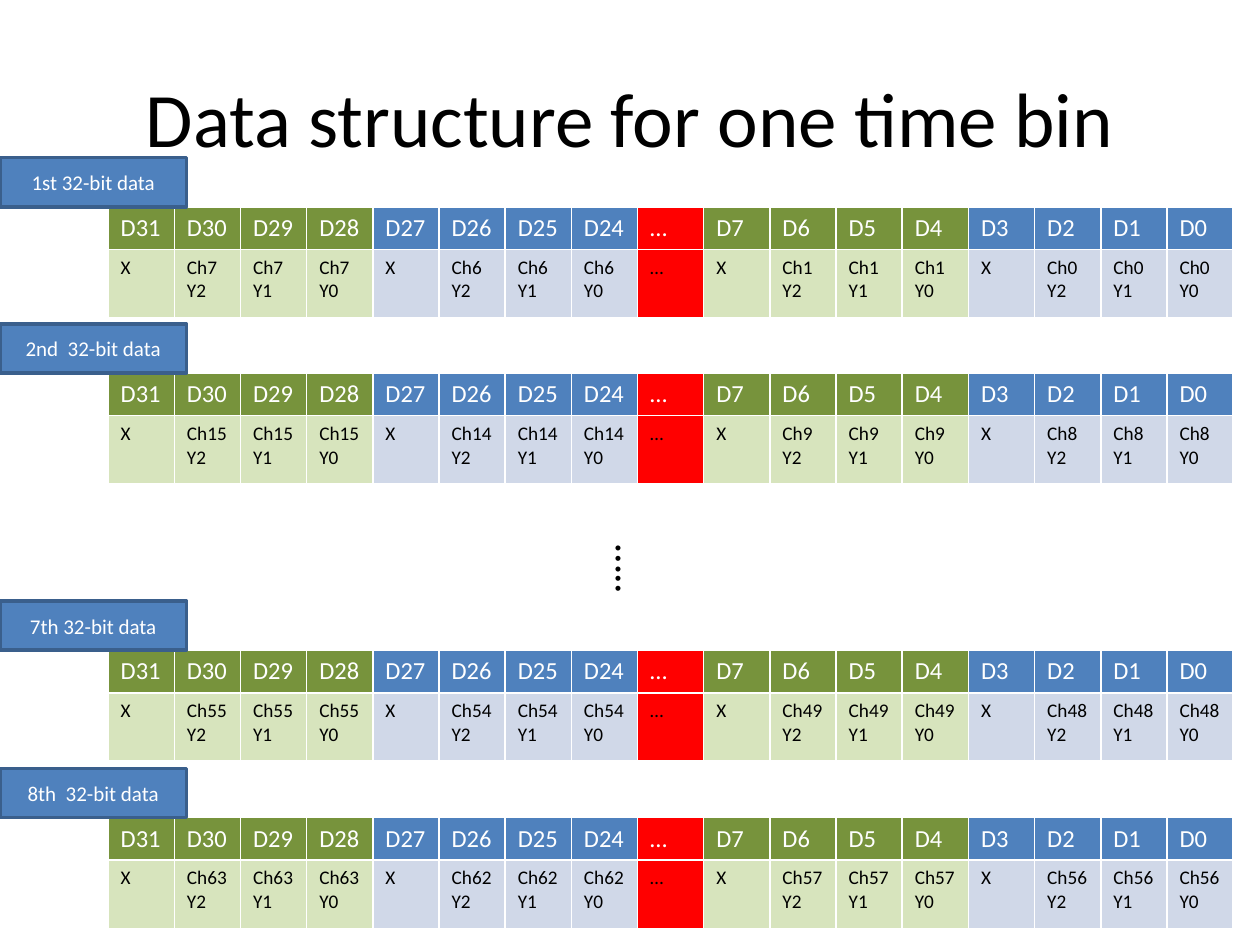
"""Build the slide that lays out the 32-bit data words of one time bin."""
from dataclasses import dataclass
from typing import Any

from pptx import Presentation
from pptx.dml.color import RGBColor
from pptx.enum.shapes import MSO_SHAPE
from pptx.enum.text import MSO_ANCHOR, MSO_AUTO_SIZE, PP_ALIGN
from pptx.util import Cm, Pt

RECTANGLE = MSO_SHAPE.RECTANGLE
MIDDLE = MSO_ANCHOR.MIDDLE
CENTER = PP_ALIGN.CENTER
GROW = MSO_AUTO_SIZE.SHAPE_TO_FIT_TEXT

TABLE_LEFT, TABLE_WIDTH = 2.18, 22.68
ROW_HEIGHTS = (0.83, 1.38)
LABEL_WIDTH, LABEL_HEIGHT = 3.76, 0.99
WORDS = (
    (1, "1st 32-bit data", 4.17),
    (2, "2nd  32-bit data", 7.52),
    (7, "7th 32-bit data", 13.11),
    (8, "8th  32-bit data", 16.48),
)


@dataclass(frozen=True)
class Theme:
    font: str = "Calibri"
    black: str = "000000"
    white: str = "FFFFFF"
    blue: str = "4F81BD"
    outline: str = "3A5F8C"
    odd: tuple = ("77933C", "D7E4BD")
    even: tuple = ("4F81BD", "D0D8E8")
    gap: tuple = ("FF0000", "FF0000")
    title_size: int = 44
    dots_size: int = 24
    head_size: int = 14
    label_size: int = 12
    body_size: int = 11


@dataclass
class SlideBuilder:
    theme: Theme
    slide: Any

    def set_text(self, tf, text, size, color, align=None):
        tf.text = text
        formats = {"name": self.theme.font, "size": Pt(size), "bold": False}
        for p in tf.paragraphs:
            p.alignment = align
            for r in p.runs:
                for key, value in formats.items():
                    setattr(r.font, key, value)
                r.font.color.rgb = RGBColor.from_string(color)

    def title(self, text, left, top, width, height):
        sp = self.slide.shapes.title
        box = {"left": left, "top": top, "width": width, "height": height}
        for key, value in box.items():
            setattr(sp, key, Cm(value))
        sp.text_frame.vertical_anchor = MIDDLE
        self.set_text(sp.text_frame, text, self.theme.title_size, self.theme.black, CENTER)

    def label(self, text, left, top):
        sp = self.slide.shapes.add_shape(
            RECTANGLE, Cm(left), Cm(top), Cm(LABEL_WIDTH), Cm(LABEL_HEIGHT))
        sp.shadow.inherit = False
        sp.fill.solid()
        sp.fill.fore_color.rgb = RGBColor.from_string(self.theme.blue)
        sp.line.color.rgb = RGBColor.from_string(self.theme.outline)
        sp.line.width = Pt(2)
        sp.text_frame.vertical_anchor = MIDDLE
        self.set_text(sp.text_frame, text, self.theme.label_size, self.theme.white, CENTER)

    def table(self, columns, top):
        frame = self.slide.shapes.add_table(
            len(ROW_HEIGHTS), len(columns), Cm(TABLE_LEFT), Cm(top),
            Cm(TABLE_WIDTH), Cm(sum(ROW_HEIGHTS)))
        table = frame.table
        for row, height in zip(table.rows, ROW_HEIGHTS):
            row.height = Cm(height)
        styles = ((self.theme.head_size, self.theme.white),
                  (self.theme.body_size, self.theme.black))
        for c, (texts, fills) in enumerate(columns):
            table.columns[c].width = Cm(TABLE_WIDTH / len(columns))
            for r, (size, color) in enumerate(styles):
                cell = table.cell(r, c)
                cell.fill.solid()
                cell.fill.fore_color.rgb = RGBColor.from_string(fills[r])
                self.set_text(cell.text_frame, texts[r], size, color)

    def vertical_dots(self, text, left, top, width, height):
        sp = self.slide.shapes.add_textbox(Cm(left), Cm(top), Cm(width), Cm(height))
        tf = sp.text_frame
        for key, value in {"word_wrap": False, "auto_size": GROW}.items():
            setattr(tf, key, value)
        sp.element.txBody.bodyPr.set("vert", "eaVert")
        self.set_text(tf, text, self.theme.dots_size, self.theme.black)


def word_columns(number, theme):
    """Return the texts and fills of each column of one data word."""
    columns = []
    for nibble in (7, 6, None, 1, 0):
        if nibble is None:
            columns.append((("…", "…"), theme.gap))
            continue
        channel = 8 * (number - 1) + nibble
        fills = theme.odd if nibble % 2 else theme.even
        for bit in (3, 2, 1, 0):
            content = "X" if bit == 3 else f"Ch{channel}\nY{bit}"
            columns.append(((f"D{4 * nibble + bit}", content), fills))
    return columns


def main():
    prs = Presentation()
    prs.slide_width, prs.slide_height = Cm(25.4), Cm(19.05)
    theme = Theme()
    s = SlideBuilder(theme, prs.slides.add_slide(prs.slide_layouts[5]))
    s.title("Data structure for one time bin", 1.27, 0.76, 22.86, 3.18)
    for number, text, top in WORDS:
        s.table(word_columns(number, theme), top)
        s.label(text, 0, top - LABEL_HEIGHT)
    s.vertical_dots("…..", 11.84, 10.72, 1.55, 1.27)
    prs.save("out.pptx")


if __name__ == "__main__":
    main()
